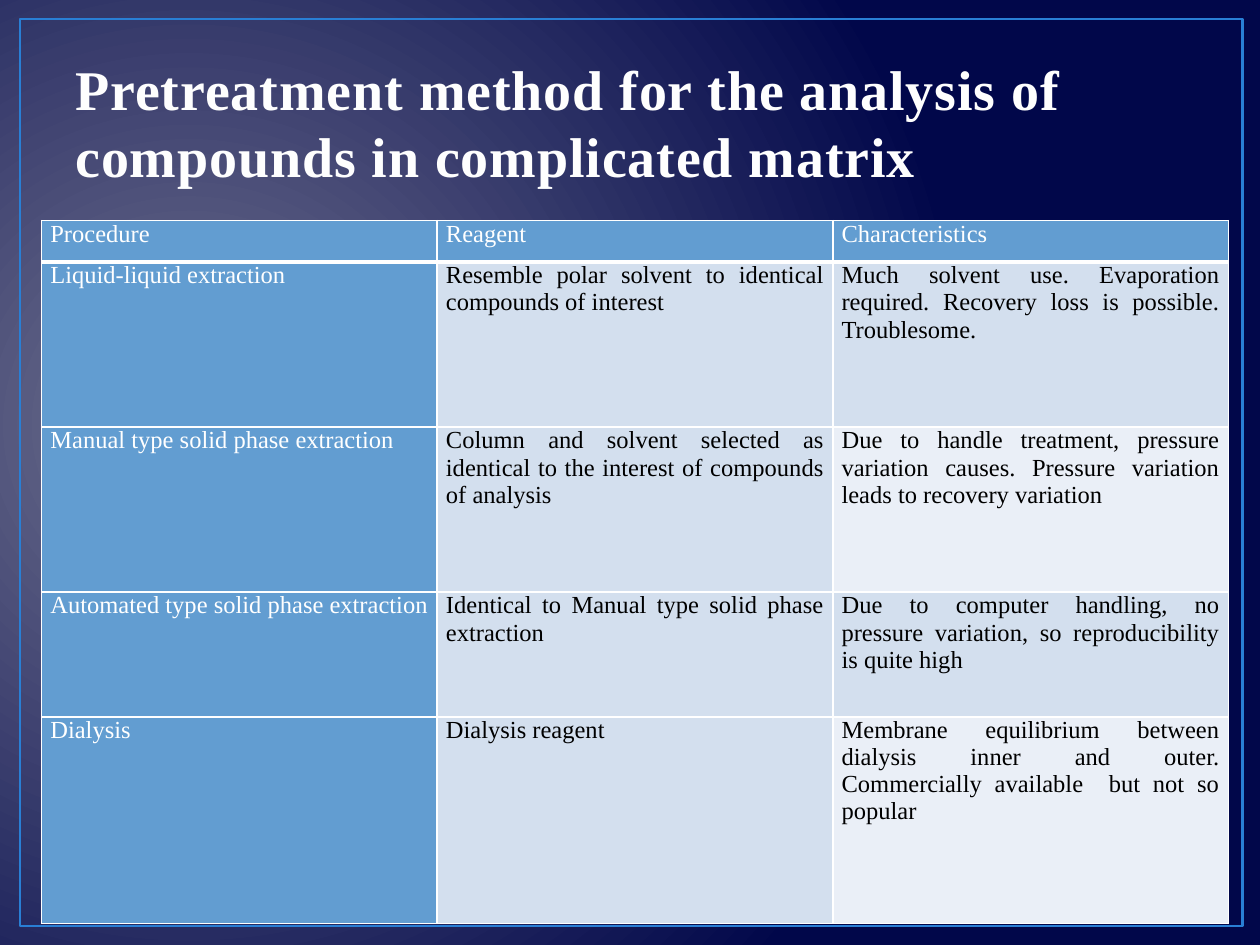
from dataclasses import dataclass
from lxml.etree import SubElement
from pptx import Presentation
from pptx.dml.color import RGBColor as Rgb
from pptx.enum.shapes import MSO_SHAPE as Form
from pptx.enum.text import MSO_ANCHOR as Anchor, PP_ALIGN as Align
from pptx.oxml import parse_xml
from pptx.oxml.ns import nsdecls, qn
from pptx.util import Inches, Pt


@dataclass(frozen=True)
class Theme:
    font: str = "Times New Roman"
    glow: str = "6E708E"
    night: str = "01074A"
    frame: str = "297FD5"
    title: str = "FEFEFE"
    white: str = "FFFFFF"
    ink: str = "000000"
    head: str = "629DD1"
    band: str = "D3DFEE"
    pale: str = "EAEFF7"
    big: int = 32
    small: int = 14


class Page:
    def __init__(self, slide, theme):
        self.slide = slide
        self.theme = theme

    def back(self):
        fill = self.slide.background.fill
        fill.gradient()
        for stop, tone in zip(fill.gradient_stops, (self.theme.glow, self.theme.night)):
            stop.color.rgb = Rgb.from_string(tone)
        line = self.slide.element.find(".//" + qn("a:lin"))
        ring = parse_xml(
            f'<a:path {nsdecls("a")} path="circle">'
            '<a:fillToRect l="15000" t="50000" r="85000" b="60000"/></a:path>'
        )
        line.getparent().replace(line, ring)

    def frame(self, box):
        shape = self.slide.shapes.add_shape(Form.RECTANGLE, *map(Inches, box))
        shape.shadow.inherit = False
        shape.fill.background()
        shape.line.color.rgb = Rgb.from_string(self.theme.frame)
        shape.line.width = Pt(1.5)

    def add_text(self, para, text, size, tone, bold=False):
        run = para.add_run()
        run.text = text
        font = run.font
        font.name = self.theme.font
        font.size = Pt(size)
        font.bold = bold
        font.color.rgb = Rgb.from_string(tone)
        return run

    def title(self, text, box):
        body = self.slide.shapes.add_textbox(*map(Inches, box)).text_frame
        body.word_wrap = True
        body.vertical_anchor = Anchor.BOTTOM
        run = self.add_text(body.paragraphs[0], text, self.theme.big, self.theme.title, True)
        run.font._element.set("spc", "50")

    def edge(self, cell, **widths):
        props = cell._tc.get_or_add_tcPr()
        for spot, side in enumerate("LRTB"):
            line = parse_xml(f'<a:ln{side} {nsdecls("a")}/>')
            line.set("w", str(Pt(widths.get(side, 1))))
            paint = SubElement(line, qn("a:solidFill"))
            SubElement(paint, qn("a:srgbClr")).set("val", self.theme.white)
            props.insert(spot, line)

    def cell(self, cell, text, fill, tone):
        cell.margin_left = cell.margin_right = Inches(0.07)
        cell.margin_top = cell.margin_bottom = 0
        cell.fill.solid()
        cell.fill.fore_color.rgb = Rgb.from_string(fill)
        para = cell.text_frame.paragraphs[0]
        para.alignment = Align.JUSTIFY
        self.add_text(para, text, self.theme.small, tone)

    def table(self, rows, box, highs):
        look = self.theme
        grid = self.slide.shapes.add_table(len(rows), len(rows[0]), *map(Inches, box)).table
        for row, high in zip(grid.rows, highs):
            row.height = Inches(high)
        for r, row in enumerate(rows):
            for c, text in enumerate(row):
                lead = r == 0 or c == 0
                pale = c == 2 and r % 2 == 0
                fill = look.head if lead else look.pale if pale else look.band
                cell = grid.cell(r, c)
                self.cell(cell, text, fill, look.white if lead else look.ink)
                self.edge(cell, B=3 if r == 0 else 1, T=3 if r == 1 else 1)


ROWS = [
    ("Procedure", "Reagent", "Characteristics"),
    (
        "Liquid-liquid extraction",
        "Resemble polar solvent to identical compounds of interest",
        "Much solvent use. Evaporation required. Recovery loss is possible. Troublesome.",
    ),
    (
        "Manual type solid phase extraction",
        "Column and solvent selected as identical to the interest of compounds of analysis",
        "Due to handle treatment, pressure variation causes. "
        "Pressure variation leads to recovery variation",
    ),
    (
        "Automated type solid phase extraction",
        "Identical to Manual type solid phase extraction",
        "Due to computer handling, no pressure variation, so reproducibility is quite high",
    ),
    (
        "Dialysis",
        "Dialysis reagent",
        "Membrane equilibrium between dialysis inner and outer. "
        "Commercially available  but not so popular",
    ),
]


def main():
    deck = Presentation()
    deck.slide_width, deck.slide_height = Inches(10), Inches(7.5)
    page = Page(deck.slides.add_slide(deck.slide_layouts[6]), Theme())
    page.back()
    page.frame((0.16, 0.15, 9.7, 7.2))
    page.title(
        "Pretreatment method for the analysis of compounds in complicated matrix",
        (0.5, 0.3, 9, 1.25),
    )
    page.table(ROWS, (0.33, 1.75, 9.42, 5.58), (0.33, 1.31, 1.31, 0.99, 1.64))
    deck.save("out.pptx")


if __name__ == "__main__":
    main()
